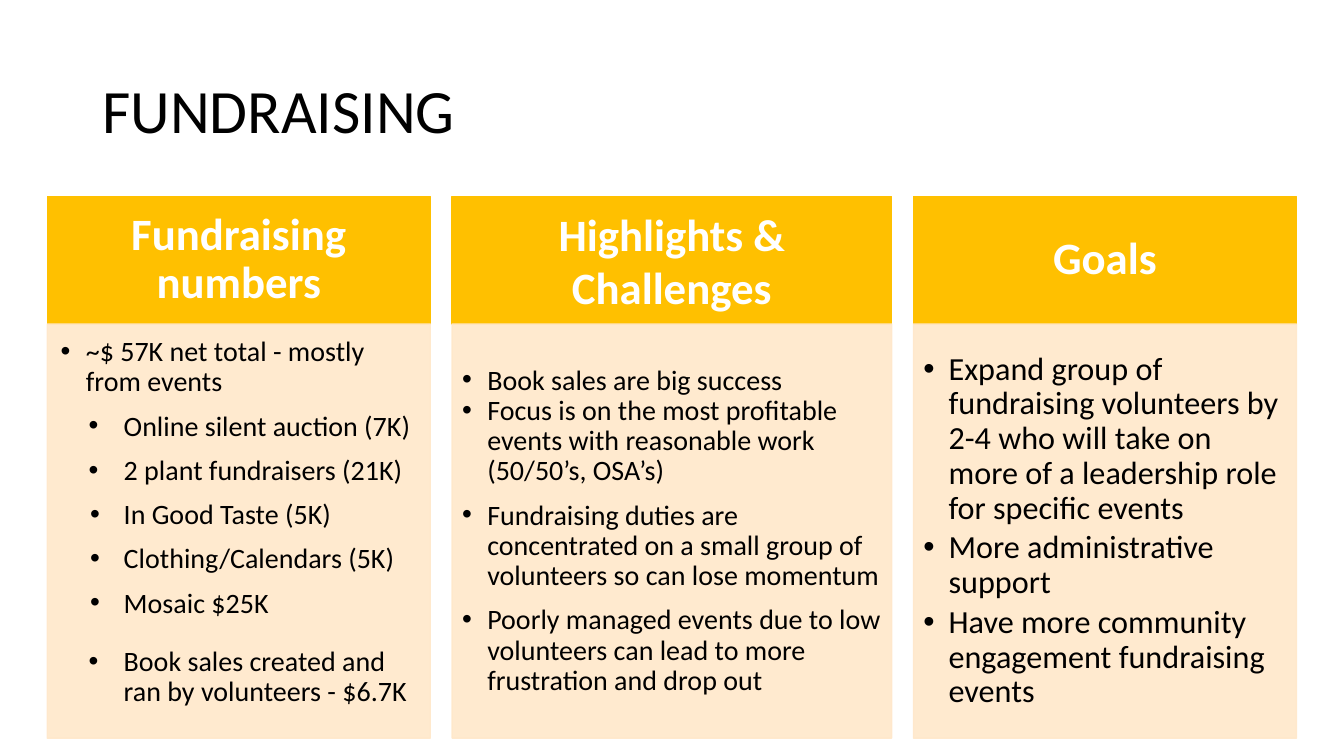
from lxml.etree import SubElement
from pptx import Presentation
from pptx.dml.color import RGBColor
from pptx.enum.shapes import MSO_SHAPE as Shape
from pptx.enum.text import MSO_ANCHOR as Anchor, PP_ALIGN as Align
from pptx.oxml.ns import qn
from pptx.util import Pt

AMBER, CREAM, BLACK, WHITE = "FFC000", "FFE8CA", "000000", "FFFFFF"
HEAD_TOP, HEAD_HEIGHT, LIST_HEIGHT = 140.2, 91.2, 295.9
LEFT, GAP = 33.8, 15.6


def style_font(para, size, colour, bold=False):
    para.font.name = "Calibri"
    para.font.size = Pt(size)
    para.font.bold = bold
    para.font.color.rgb = RGBColor.from_string(colour)


def add_panel(left, top, width, height, colour, insets, alpha=100):
    box = page.shapes.add_shape(Shape.RECTANGLE, Pt(left), Pt(top), Pt(width), Pt(height))
    box.shadow.inherit = False
    box.line.width = Pt(1)
    box.fill.solid()
    box.line.fill.solid()
    for paint in (box.fill, box.line.fill):
        paint.fore_color.rgb = RGBColor.from_string(colour)
    if alpha < 100:
        for tone in box.element.spPr.iter(qn("a:srgbClr")):
            SubElement(tone, qn("a:alpha"), val=str(alpha * 1000))
    frame = box.text_frame
    frame.word_wrap = True
    frame.margin_left, frame.margin_top, frame.margin_right, frame.margin_bottom = map(Pt, insets)
    frame.vertical_anchor = Anchor.MIDDLE
    return frame


deck = Presentation()
deck.slide_width, deck.slide_height = Pt(960), Pt(540)
page = deck.slides.add_slide(deck.slide_layouts[5])

title = page.shapes.title
title.left, title.top, title.width, title.height = Pt(66), Pt(28.8), Pt(828), Pt(104.4)
title.text_frame.text = "FUNDRAISING"
title.text_frame.vertical_anchor = Anchor.MIDDLE
heading = title.text_frame.paragraphs[0]
heading.alignment = Align.LEFT
heading.line_spacing = 0.9
style_font(heading, 44, BLACK)

EVEN = (7.2, 7.2, 7.2, 7.2)
# Each item: text, level, space before, space after, hanging indent
columns = [
    ("Fundraising numbers", 273.6, 0.9, (18, 10, 18, 10), 20, (9.6, 9.6, 12.8, 14.4), Anchor.TOP, [
        ("~$ 57K net total - mostly from events", 1, 0, 0, 18),
        ("Online silent auction (7K)", 2, 10, 0, 25),
        ("2 plant fundraisers (21K)", 2, 10, 0, 25),
        ("In Good Taste (5K)", 2, 10, 0, 24),
        ("Clothing/Calendars (5K)", 2, 10, 0, 24),
        ("Mosaic $25K", 2, 10, 0, 24),
        ("Book sales created and ran by volunteers - $6.7K", 2, 20, 10, 25),
    ]),
    ("Highlights & Challenges", 313.9, 1.0, EVEN, 20, EVEN, Anchor.MIDDLE, [
        ("Book sales are big success", 1, 0, 0, 18),
        ("Focus is on the most profitable events with reasonable work (50/50’s, OSA’s)", 1, 0, 0, 18),
        ("Fundraising duties are concentrated on a small group of volunteers so can lose momentum",
         1, 10, 0, 18),
        ("Poorly managed events due to low volunteers can lead to more frustration and drop out",
         1, 10, 0, 18),
    ]),
    ("Goals", 273.6, 0.9, EVEN, 23, EVEN, Anchor.MIDDLE, [
        ("Expand group of fundraising volunteers by 2-4 who will take on more of a leadership role "
         "for specific events", 1, 3.5, 0, 18),
        ("More administrative support", 1, 3.5, 0, 18),
        ("Have more community engagement fundraising events", 1, 3.5, 0, 18),
    ]),
]

left = LEFT
for name, width, head_spacing, head_insets, size, insets, anchor, items in columns:
    head = add_panel(left, HEAD_TOP, width, HEAD_HEIGHT, AMBER, head_insets)
    head.text = name
    para = head.paragraphs[0]
    para.alignment = Align.CENTER
    para.line_spacing = head_spacing
    style_font(para, 32, WHITE, bold=True)

    body = add_panel(left, HEAD_TOP + HEAD_HEIGHT, width, LIST_HEIGHT, CREAM, insets, alpha=89)
    body.vertical_anchor = anchor
    body.text = "\n".join(item[0] for item in items)
    for para, (text, level, before, after, hang) in zip(body.paragraphs, items):
        para.level = level
        para.alignment = Align.LEFT
        para.line_spacing = 0.9
        para.space_before, para.space_after = Pt(before), Pt(after)
        props = para._p.get_or_add_pPr()
        props.set("marL", str(Pt(18 if level == 1 else 45)))
        props.set("indent", str(-Pt(hang)))
        SubElement(SubElement(props, qn("a:buClr")), qn("a:srgbClr"), val=BLACK)
        SubElement(props, qn("a:buFont"), typeface="Arial")
        SubElement(props, qn("a:buChar"), char="•")
        style_font(para, size, BLACK)
    left += width + GAP

deck.save("out.pptx")
